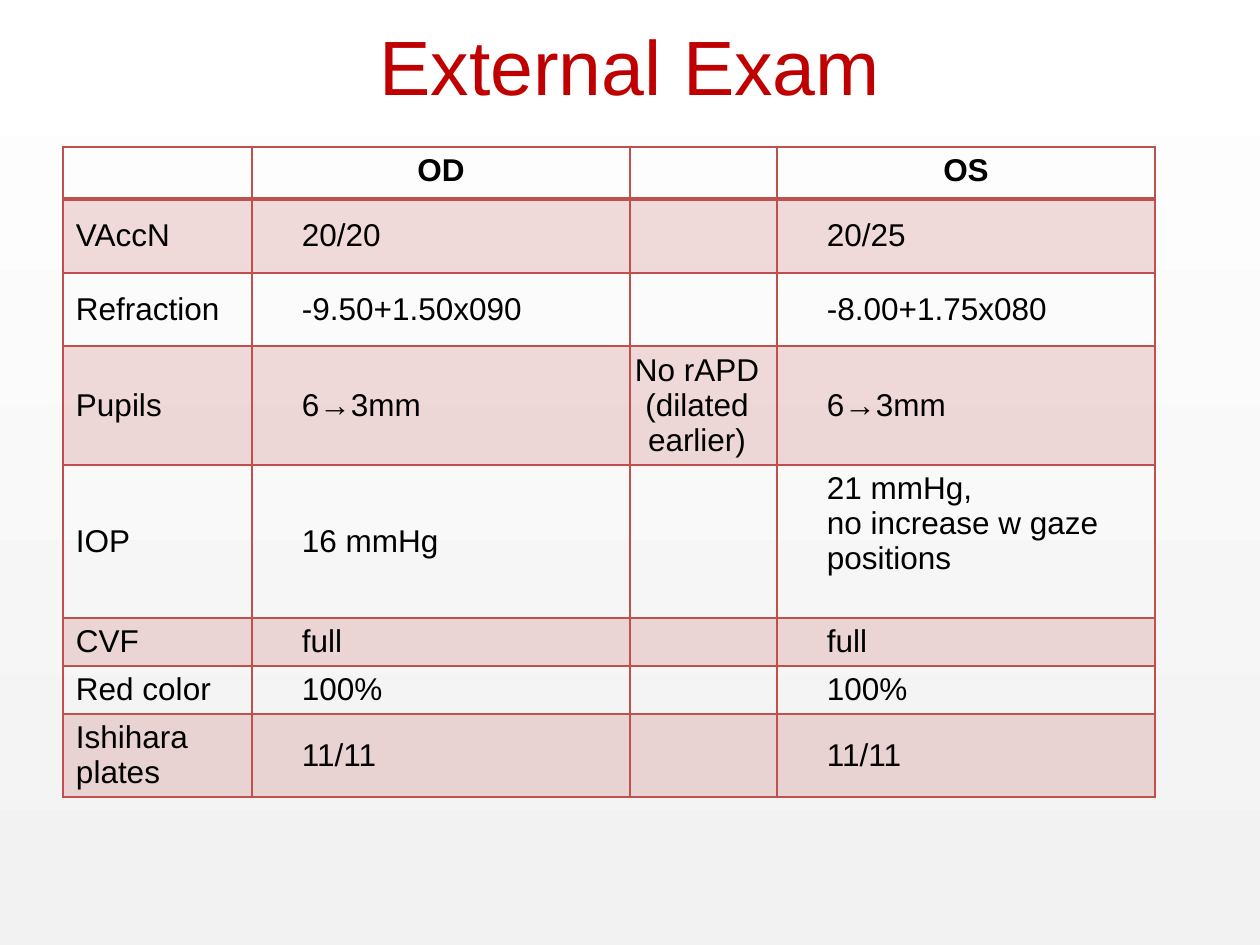
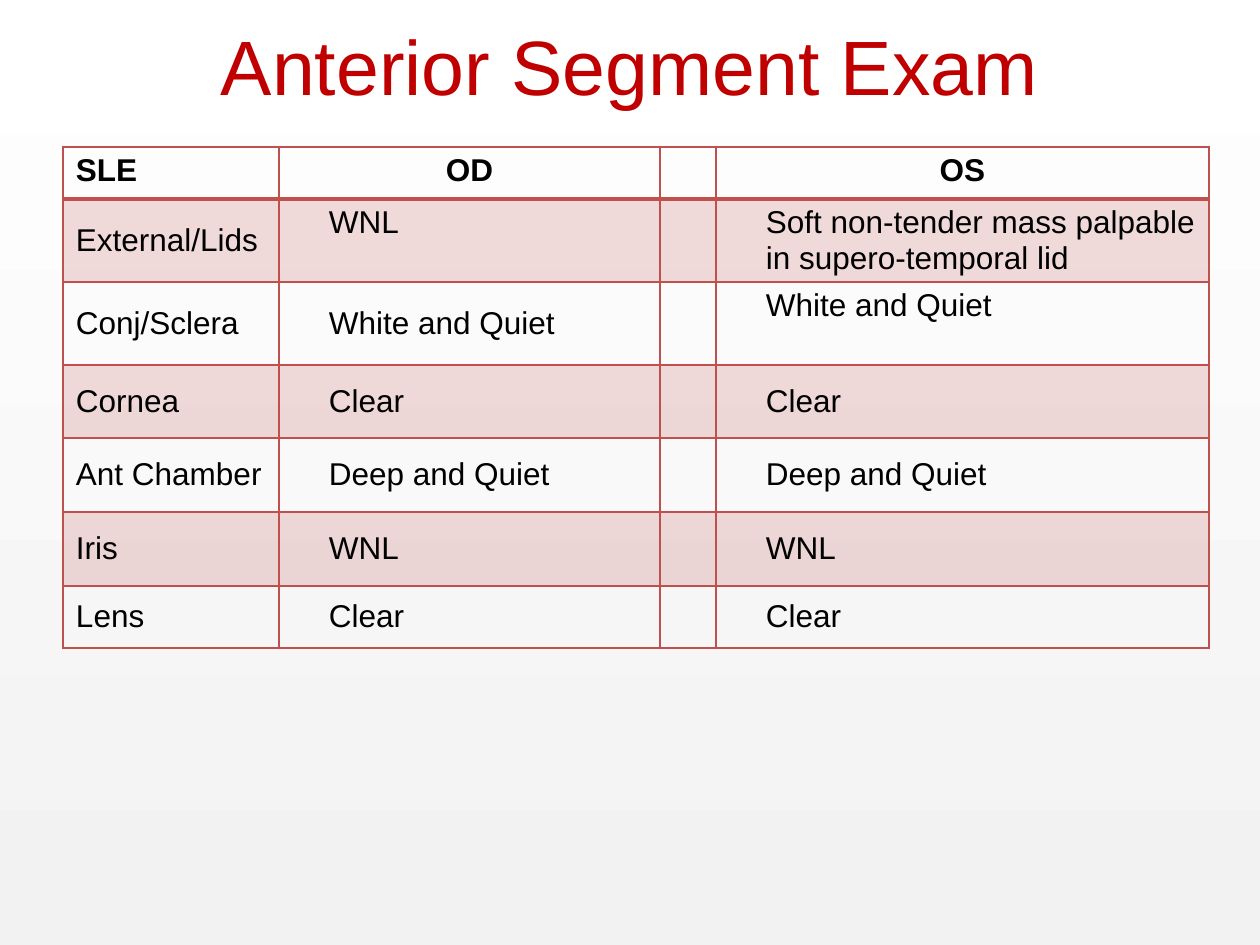
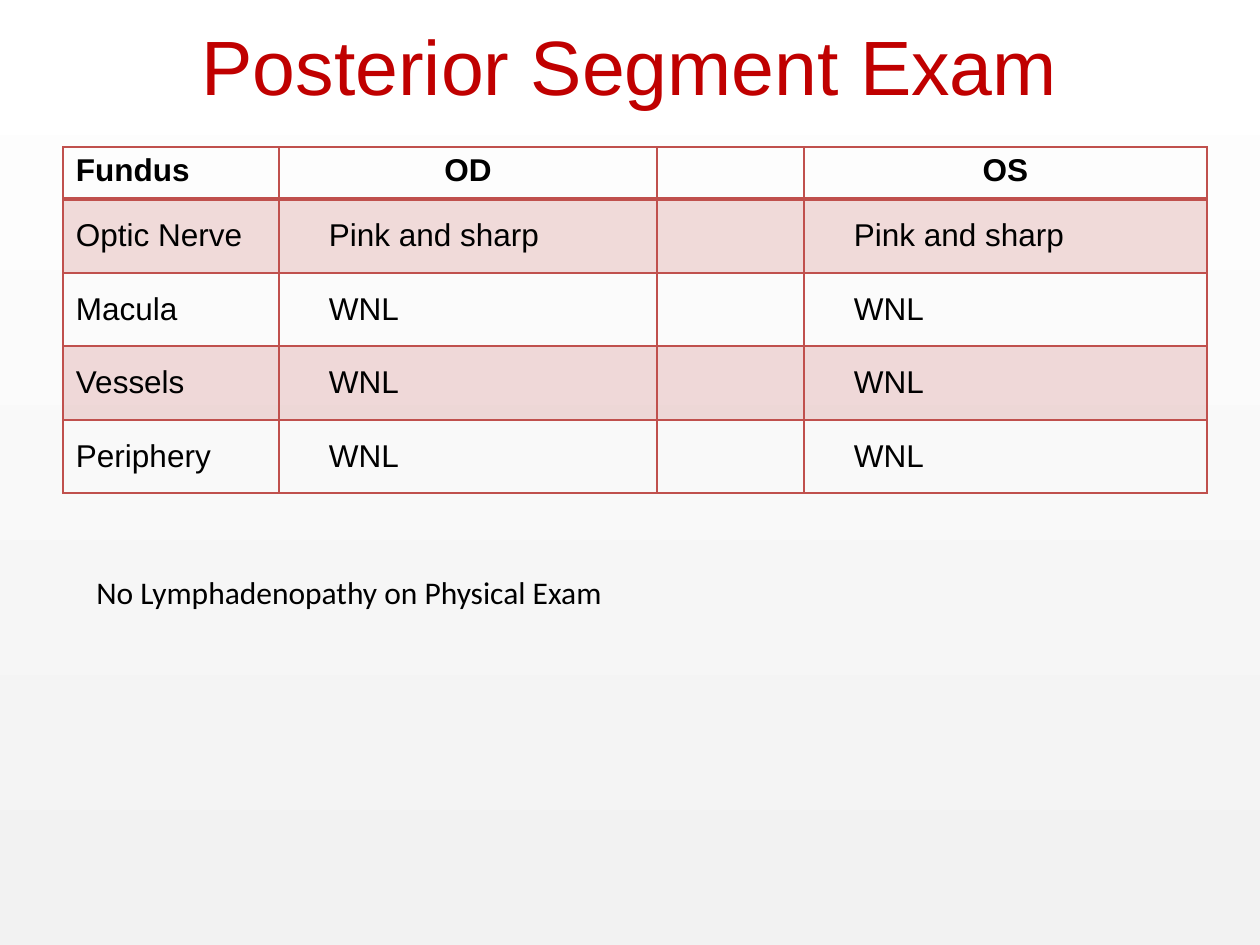
import pptx
import pptx.util
import pptx.dml.color
import pptx.enum.shapes
import pptx.enum.text
import pptx.oxml
import pptx.oxml.ns
import pptx.text.text

HUES = {"title": "C00000", "text": "000000", "line": "C0504D",
        "low": "F2F2F2", "high": "FFFFFF"}
ALIGN = pptx.enum.text.PP_ALIGN
ANCHOR = pptx.enum.text.MSO_ANCHOR
TITLE = {"name": "Arial", "size": pptx.util.Pt(44), "bold": False}
HEAD = {"name": "Arial", "size": pptx.util.Pt(18), "bold": True}
BODY = {**HEAD, "bold": False}
NOTE = {**BODY, "name": "Calibri"}
WIDE, HIGH = 1260, 945
LEFT, TOP = 63, 147

EXAMS = [
    {
        "title": "External Exam",
        "cols": (189, 378, 147, 378),
        "rows": [
            (52, "", "OD", "", "OS"),
            (74, "VAccN", "20/20", "", "20/25"),
            (73, "Refraction", "-9.50+1.50x090", "", "-8.00+1.75x080"),
            (119, "Pupils", "6→3mm", "No rAPD\n(dilated earlier)", "6→3mm"),
            (153, "IOP", "16 mmHg", "", "21 mmHg,\nno increase w gaze positions"),
            (48, "CVF", "full", "", "full"),
            (48, "Red color", "100%", "", "100%"),
            (83, "Ishihara plates", "11/11", "", "11/11"),
        ],
        "high": {(4, 3)},
    },
    {
        "title": "Anterior Segment Exam",
        "cols": (216, 381, 56, 493),
        "rows": [
            (52, "SLE", "OD", "", "OS"),
            (83, "External/Lids", "WNL", "",
             "Soft non-tender mass palpable in supero-temporal lid"),
            (83, "Conj/Sclera", "White and Quiet", "", "White and Quiet"),
            (73, "Cornea", "Clear", "", "Clear"),
            (74, "Ant Chamber", "Deep and Quiet", "", "Deep and Quiet"),
            (74, "Iris", "WNL", "", "WNL"),
            (62, "Lens", "Clear", "", "Clear"),
        ],
        "high": {(1, 1), (2, 3)},
    },
    {
        "title": "Posterior Segment Exam",
        "cols": (216, 378, 147, 403),
        "rows": [
            (52, "Fundus", "OD", "", "OS"),
            (74, "Optic Nerve", "Pink and sharp", "", "Pink and sharp"),
            (73, "Macula", "WNL", "", "WNL"),
            (74, "Vessels", "WNL", "", "WNL"),
            (73, "Periphery", "WNL", "", "WNL"),
        ],
        "high": set(),
        "note": "No Lymphadenopathy on Physical Exam",
    },
]


def px(num):
    return round(num * 914400 / 126)


def hue(name):
    return pptx.dml.color.RGBColor.from_string(HUES[name])


def put(item, vals):
    for key, val in vals.items():
        setattr(item, key, val)


def box(left, top, width, height):
    return {"left": px(left), "top": px(top), "width": px(width), "height": px(height)}


def write(frame, text, font, tint="text", align=ALIGN.LEFT):
    frame.text = text
    for para in frame.paragraphs:
        para.alignment = align
        fonts = [run.font for run in para.runs]
        if not fonts:
            fonts = [pptx.text.text.Font(para._p.get_or_add_endParaRPr())]
        for item in fonts:
            put(item, font)
            item.color.rgb = hue(tint)


def shade(master, slide):
    shape = slide.shapes.add_shape(
        pptx.enum.shapes.MSO_SHAPE.RECTANGLE, **box(0, 0, WIDE, HIGH))
    shape.shadow.inherit = False
    shape.line.fill.background()
    shape.fill.gradient()
    shape.fill.gradient_angle = 90
    for stop, name in zip(shape.fill.gradient_stops, ("low", "high")):
        stop.color.rgb = hue(name)
    master.shapes._spTree.insert(2, shape._element)


def edge(cell, side, points):
    props = cell._tc.get_or_add_tcPr()
    space = pptx.oxml.ns.nsdecls("a")
    props.append(pptx.oxml.parse_xml(
        f'<a:ln{side} {space} w="{points * 12700}"><a:solidFill>'
        f'<a:srgbClr val="{HUES["line"]}"/></a:solidFill></a:ln{side}>'))


def tint(cell, band):
    if not band:
        cell.fill.background()
        return
    cell.fill.solid()
    cell.fill.fore_color.rgb = hue("line")
    fill = cell._tc.tcPr.find(pptx.oxml.ns.qn("a:solidFill"))
    fill[0].append(pptx.oxml.parse_xml(
        f'<a:alpha {pptx.oxml.ns.nsdecls("a")} val="20000"/>'))


def add_cell(cell, text, row, col, high):
    head = row == 0
    mid = col == 2 or head and col > 0
    inset = 13 if head or col == 0 else 0 if col == 2 else 50
    put(cell, {
        "margin_left": px(inset), "margin_right": px(13),
        "margin_top": px(6), "margin_bottom": px(6),
        "vertical_anchor": ANCHOR.TOP if head or high else ANCHOR.MIDDLE,
    })
    write(cell.text_frame, text, HEAD if head else BODY,
          align=ALIGN.CENTER if mid else ALIGN.LEFT)
    for side in "LRTB":
        thick = side == "B" and row == 0 or side == "T" and row == 1
        edge(cell, side, 2 if thick else 1)
    tint(cell, row % 2 == 1)


def add_grid(slide, exam):
    rows, cols = exam["rows"], exam["cols"]
    size = box(LEFT, TOP, sum(cols), sum(row[0] for row in rows))
    grid = slide.shapes.add_table(len(rows), len(cols), **size).table
    put(grid, {"first_row": False, "horz_banding": False})
    for col, width in zip(grid.columns, cols):
        col.width = px(width)
    for r, (height, *texts) in enumerate(rows):
        grid.rows[r].height = px(height)
        for c, text in enumerate(texts):
            add_cell(grid.cell(r, c), text, r, c, (r, c) in exam["high"])


def add_title(slide, text):
    title = slide.shapes.title
    put(title, box(LEFT, -14, 1134, 158))
    title.text_frame.vertical_anchor = ANCHOR.MIDDLE
    write(title.text_frame, text, TITLE, "title", ALIGN.CENTER)


def add_note(slide, text):
    frame = slide.shapes.add_textbox(**box(84, 567, 882, 50)).text_frame
    put(frame, {"word_wrap": True,
                "auto_size": pptx.enum.text.MSO_AUTO_SIZE.SHAPE_TO_FIT_TEXT})
    write(frame, text, NOTE)


def main():
    deck = pptx.Presentation()
    put(deck, {"slide_width": px(WIDE), "slide_height": px(HIGH)})
    for exam in EXAMS:
        slide = deck.slides.add_slide(deck.slide_layouts[5])
        add_title(slide, exam["title"])
        add_grid(slide, exam)
        if "note" in exam:
            add_note(slide, exam["note"])
    shade(deck.slide_master, deck.slides[0])
    deck.save("out.pptx")


if __name__ == "__main__":
    main()
